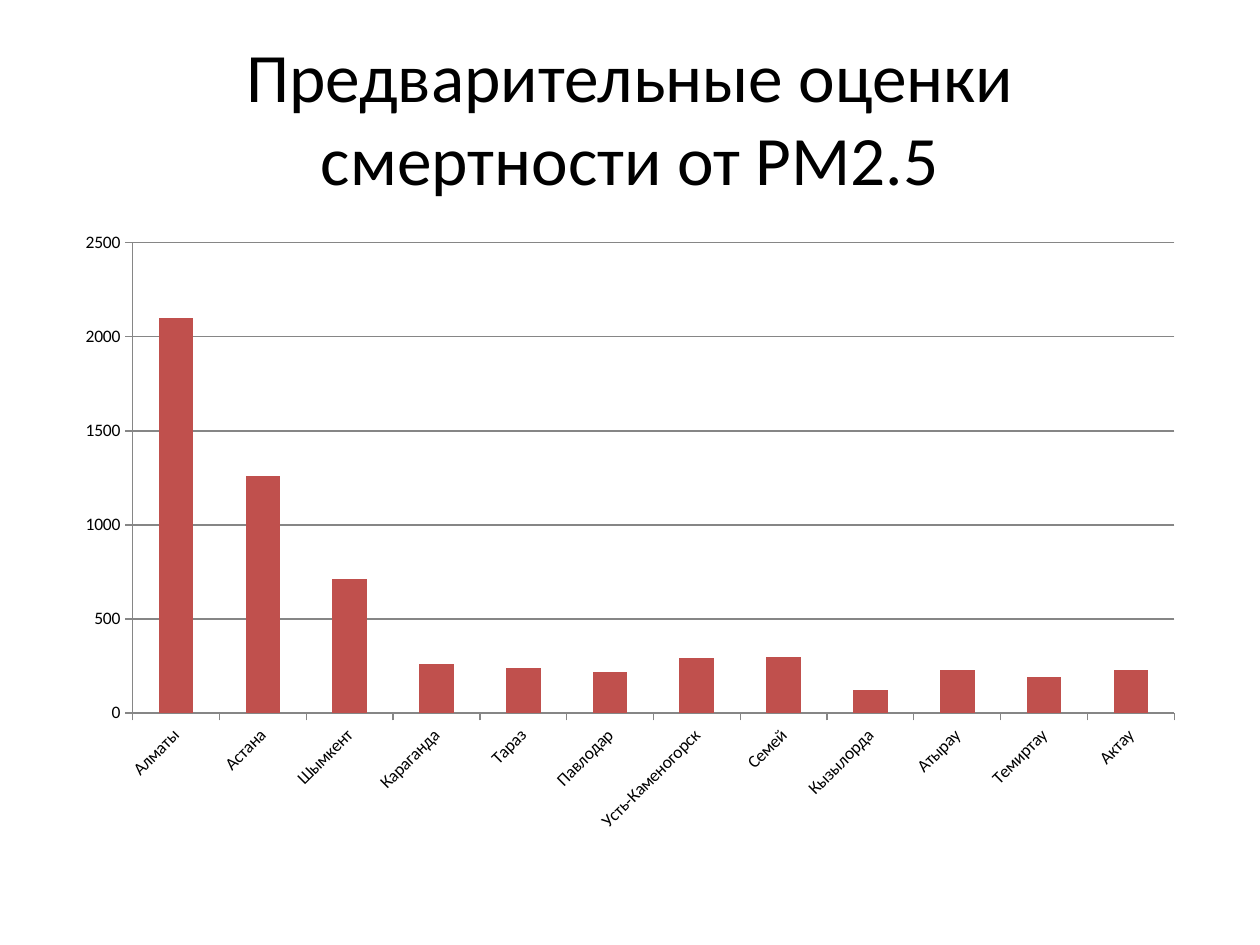
"""Build a slide with a column chart of estimated PM2.5 mortality by city."""
from dataclasses import dataclass

from pptx import Presentation
from pptx.chart.data import CategoryChartData
from pptx.dml.color import RGBColor
from pptx.enum.chart import XL_CHART_TYPE, XL_TICK_MARK
from pptx.enum.text import MSO_ANCHOR, MSO_AUTO_SIZE, PP_ALIGN
from pptx.util import Pt

TITLE = "Предварительные оценки смертности от PM2.5"
SERIES = "Series 1"
DEATHS = {
    "Алматы": 2100,
    "Астана": 1260,
    "Шымкент": 710,
    "Караганда": 260,
    "Тараз": 240,
    "Павлодар": 220,
    "Усть-Каменогорск": 290,
    "Семей": 300,
    "Кызылорда": 120,
    "Атырау": 230,
    "Темиртау": 190,
    "Актау": 230,
}
SLIDE_SIZE = (720, 540)
MARGIN = 36
TITLE_TOP, TITLE_HEIGHT = 21.6, 90
CHART_TOP, CHART_HEIGHT = 126, 356.4


@dataclass(frozen=True)
class Theme:
    font: str = "Calibri"
    title_size: float = 39.6
    label_size: float = 10
    text: RGBColor = RGBColor(0x00, 0x00, 0x00)
    bar: RGBColor = RGBColor(0xC0, 0x50, 0x4D)
    rule: RGBColor = RGBColor(0x86, 0x86, 0x86)
    rule_width: float = 0.75


THEME = Theme()


def style_font(font, size):
    font.name = THEME.font
    font.size = Pt(size)
    font.bold = False
    font.color.rgb = THEME.text


def style_rule(line):
    line.color.rgb = THEME.rule
    line.width = Pt(THEME.rule_width)


def place(top, height):
    return Pt(MARGIN), Pt(top), Pt(SLIDE_SIZE[0] - 2 * MARGIN), Pt(height)


def add_title(slide):
    title = slide.shapes.title
    title.left, title.top, title.width, title.height = place(TITLE_TOP, TITLE_HEIGHT)
    frame = title.text_frame
    frame.word_wrap = True
    frame.auto_size = MSO_AUTO_SIZE.NONE
    frame.vertical_anchor = MSO_ANCHOR.MIDDLE
    heading = frame.paragraphs[0]
    heading.alignment = PP_ALIGN.CENTER
    run = heading.add_run()
    run.text = TITLE
    style_font(run.font, THEME.title_size)


def add_deaths_chart(slide):
    data = CategoryChartData(number_format="0")
    data.categories = list(DEATHS)
    data.add_series(SERIES, list(DEATHS.values()))
    chart = slide.shapes.add_chart(
        XL_CHART_TYPE.COLUMN_CLUSTERED, *place(CHART_TOP, CHART_HEIGHT), data
    ).chart
    chart.has_legend = False
    chart.has_title = False
    style_font(chart.font, THEME.label_size)

    plot = chart.plots[0]
    plot.gap_width = 150
    plot.vary_by_categories = False
    bars = plot.series[0]
    bars.invert_if_negative = False
    bars.format.fill.solid()
    bars.format.fill.fore_color.rgb = THEME.bar

    cities, deaths = chart.category_axis, chart.value_axis
    for axis in (cities, deaths):
        axis.major_tick_mark = XL_TICK_MARK.OUTSIDE
        axis.minor_tick_mark = XL_TICK_MARK.NONE
        style_rule(axis.format.line)
        style_font(axis.tick_labels.font, THEME.label_size)
    cities._element.txPr.bodyPr.set("rot", "-2700000")
    deaths.minimum_scale, deaths.maximum_scale, deaths.major_unit = 0, 2500, 500
    deaths.tick_labels.number_format = "0"
    deaths.tick_labels.number_format_is_linked = False
    deaths.has_major_gridlines = True
    style_rule(deaths.major_gridlines.format.line)


def main():
    deck = Presentation()
    deck.slide_width, deck.slide_height = map(Pt, SLIDE_SIZE)
    slide = deck.slides.add_slide(deck.slide_layouts[5])
    add_title(slide)
    add_deaths_chart(slide)
    deck.save("out.pptx")


if __name__ == "__main__":
    main()
